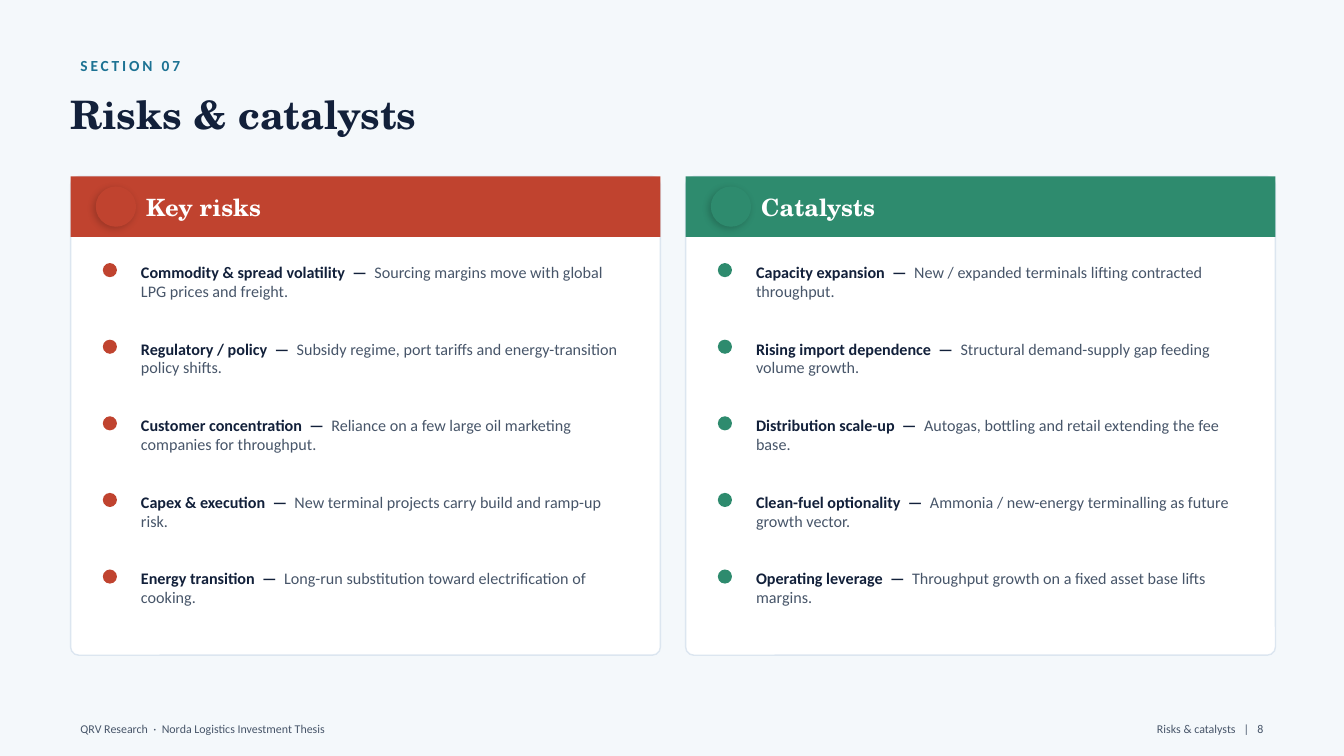
from lxml import etree
from pptx import Presentation
from pptx.dml.color import RGBColor
from pptx.enum.shapes import MSO_SHAPE
from pptx.enum.text import MSO_ANCHOR, MSO_AUTO_SIZE, PP_ALIGN
from pptx.oxml.ns import nsdecls
from pptx.util import Inches, Pt

SECTION = "SECTION 07"
TITLE = "Risks & catalysts"
FOOTER_LEFT = "QRV Research  ·  Norda Logistics Investment Thesis"
FOOTER_RIGHT = "Risks & catalysts   |   8"

RED = RGBColor(0xC0, 0x43, 0x2F)
GREEN = RGBColor(0x2E, 0x8B, 0x6E)
NAVY = RGBColor(0x12, 0x20, 0x3A)
TEAL = RGBColor(0x1C, 0x72, 0x93)
SLATE = RGBColor(0x47, 0x55, 0x69)
BORDER = RGBColor(0xDC, 0xE6, 0xF0)
WHITE = RGBColor(0xFF, 0xFF, 0xFF)
BACKGROUND = RGBColor(0xF4, 0xF8, 0xFB)

CARDS = [
    ("Key risks", RED, [
        ("Commodity & spread volatility", "Sourcing margins move with global LPG prices and freight."),
        ("Regulatory / policy", "Subsidy regime, port tariffs and energy-transition policy shifts."),
        ("Customer concentration", "Reliance on a few large oil marketing companies for throughput."),
        ("Capex & execution", "New terminal projects carry build and ramp-up risk."),
        ("Energy transition", "Long-run substitution toward electrification of cooking."),
    ]),
    ("Catalysts", GREEN, [
        ("Capacity expansion", "New / expanded terminals lifting contracted throughput."),
        ("Rising import dependence", "Structural demand-supply gap feeding volume growth."),
        ("Distribution scale-up", "Autogas, bottling and retail extending the fee base."),
        ("Clean-fuel optionality", "Ammonia / new-energy terminalling as future growth vector."),
        ("Operating leverage", "Throughput growth on a fixed asset base lifts margins."),
    ]),
]

SANS, SERIF = "Calibri", "TeX Gyre Schola"
RECT, ROUND_RECT, OVAL = MSO_SHAPE.RECTANGLE, MSO_SHAPE.ROUNDED_RECTANGLE, MSO_SHAPE.OVAL
MIDDLE = MSO_ANCHOR.MIDDLE
LEFT, RIGHT = PP_ALIGN.LEFT, PP_ALIGN.RIGHT

MARGIN = 0.7
CARD_TOP, CARD_W, CARD_H = 1.75, 5.85, 4.75
CARD_PITCH = 6.1
HEADER_H = 0.6
ITEM_TOP, ITEM_PITCH = 2.49, 0.76

prs = Presentation()
prs.slide_width, prs.slide_height = Inches(13.33), Inches(7.5)
s = prs.slides.add_slide(prs.slide_layouts[5])
s.background.fill.solid()
s.background.fill.fore_color.rgb = BACKGROUND


def add_text(box, *runs, size, font=SANS, color=SLATE, bold=False, box_shape=None,
             inset=True, align=LEFT, line_spacing=None, tracking=None):
    """Write runs, each a string or a (string, color, bold) tuple, in a box."""
    sp = box_shape or s.shapes.add_textbox(0, 0, 0, 0)
    sp.left, sp.top, sp.width, sp.height = map(Inches, box)
    tf = sp.text_frame
    tf.word_wrap = True
    tf.auto_size = MSO_AUTO_SIZE.NONE
    tf.vertical_anchor = MIDDLE
    if not inset:
        tf.margin_left = tf.margin_right = tf.margin_top = tf.margin_bottom = 0
    p = tf.paragraphs[0]
    p.alignment = align
    if line_spacing:
        p.line_spacing = line_spacing
    for run in runs:
        text, run_color, run_bold = (run, color, bold) if isinstance(run, str) else run
        r = p.add_run()
        r.text = text
        r.font.name, r.font.size, r.font.bold = font, Pt(size), run_bold
        r.font.color.rgb = run_color
        if tracking:
            r.font._element.set("spc", str(tracking * 100))


def add_block(kind, box, fill, line=None):
    sp = s.shapes.add_shape(kind, *map(Inches, box))
    sp.shadow.inherit = False
    sp.fill.solid()
    sp.fill.fore_color.rgb = fill
    if line is None:
        sp.line.fill.background()
    else:
        sp.line.color.rgb = line
        sp.line.width = Pt(1)
    return sp


def add_soft_shadow(sp):
    effects = sp._element.spPr.find("{*}effectLst")
    effects.append(etree.fromstring(
        f'<a:outerShdw {nsdecls("a")} blurRad="{Pt(5)}" dist="{Pt(2)}" dir="{135 * 60000}" '
        'algn="ctr" rotWithShape="0"><a:srgbClr val="000000"><a:alpha val="18000"/>'
        '</a:srgbClr></a:outerShdw>'))


def add_card(x, heading, accent, items):
    card = add_block(ROUND_RECT, (x, CARD_TOP, CARD_W, CARD_H), WHITE, BORDER)
    card.adjustments[0] = 0.017
    add_block(RECT, (x, CARD_TOP, CARD_W, HEADER_H), accent)
    add_soft_shadow(add_block(OVAL, (x + 0.25, CARD_TOP + 0.1, 0.4, 0.4), accent))
    add_text((x + 0.75, CARD_TOP, 4.8, HEADER_H), heading,
             size=17, font=SERIF, color=WHITE, bold=True, inset=False)
    for i, (name, detail) in enumerate(items):
        y = ITEM_TOP + i * ITEM_PITCH
        add_block(OVAL, (x + 0.32, y + 0.12, 0.14, 0.14), accent)
        add_text((x + 0.6, y, 5.05, 0.62), (f"{name}  —  ", NAVY, True), detail,
                 size=11.5, line_spacing=0.97)


add_text((MARGIN, 0.5, 6, 0.3), SECTION, size=11, color=TEAL, bold=True, tracking=2)
add_text((MARGIN, 0.78, 11.93, 0.7), TITLE, size=28, font=SERIF, color=NAVY, bold=True,
         box_shape=s.shapes.title, inset=False)
for i, (heading, accent, items) in enumerate(CARDS):
    add_card(MARGIN + i * CARD_PITCH, heading, accent, items)
add_text((MARGIN, 7.08, 8, 0.3), FOOTER_LEFT, size=8.5)
add_text((8.43, 7.08, 4.2, 0.3), FOOTER_RIGHT, size=8.5, align=RIGHT)

prs.save("out.pptx")
